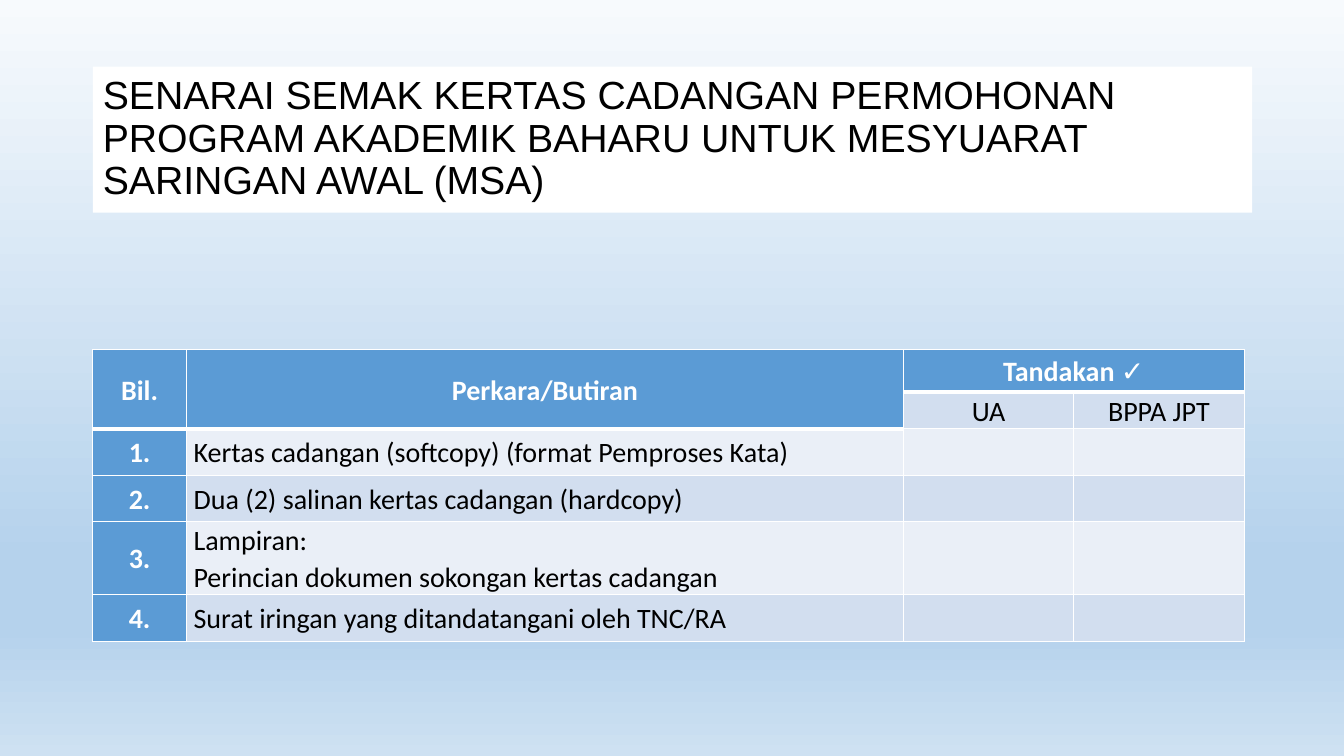
import lxml.etree
import pptx
import pptx.dml.color
import pptx.enum.text
import pptx.oxml.ns
import pptx.util
from pptx.util import Inches

WHITE, BLACK, BLUE = "FFFFFF", "000000", "5B9BD5"
BANDS = ["D2DEEF", "EAEFF7"]


def rgb(color):
    return pptx.dml.color.RGBColor.from_string(color)


def add_filled(parent, tag, color, **attributes):
    """Append an a: element that holds a colour, such as a border or gradient stop."""
    qn = pptx.oxml.ns.qn
    element = lxml.etree.SubElement(parent, qn(tag), **attributes)
    holder = element if tag == "a:gs" else lxml.etree.SubElement(element, qn("a:solidFill"))
    lxml.etree.SubElement(holder, qn("a:srgbClr"), val=color)


presentation = pptx.Presentation()
presentation.slide_width, presentation.slide_height = Inches(13.33), Inches(7.5)
slide = presentation.slides.add_slide(presentation.slide_layouts[5])

# Background gradient
background = slide.background.fill
background.gradient()
background.gradient_angle = 270
stops = background.gradient_stops
stop_list = slide.background._cSld.find(".//" + pptx.oxml.ns.qn("a:gsLst"))
for stop in list(stop_list):
    stop_list.remove(stop)
for percent, color in [(0, "F7FAFD"), (74, "B5D2EC"), (83, "B5D2EC"), (100, "CEE1F2")]:
    add_filled(stop_list, "a:gs", color, pos=str(percent * 1000))

# Title
title = slide.shapes.title
title.left, title.top = Inches(0.92), Inches(0.66)
title.width, title.height = Inches(11.5), Inches(1.45)
title.fill.solid()
title.fill.fore_color.rgb = rgb(WHITE)
title.text_frame.text = (
    "SENARAI SEMAK KERTAS CADANGAN PERMOHONAN PROGRAM AKADEMIK BAHARU "
    "UNTUK MESYUARAT SARINGAN AWAL (MSA)"
)
title.text_frame.auto_size = pptx.enum.text.MSO_AUTO_SIZE.NONE
title.text_frame.vertical_anchor = pptx.enum.text.MSO_ANCHOR.MIDDLE
heading = title.text_frame.paragraphs[0]
heading.alignment = pptx.enum.text.PP_ALIGN.LEFT
heading.line_spacing = 0.9
heading.runs[0].font.name = "Arial"
heading.runs[0].font.size = pptx.util.Pt(28)
heading.runs[0].font.color.rgb = rgb(BLACK)

# Checklist
items = [
    "Kertas cadangan (softcopy) (format Pemproses Kata)",
    "Dua (2) salinan kertas cadangan (hardcopy)",
    "Lampiran:\nPerincian dokumen sokongan kertas cadangan",
    "Surat iringan yang ditandatangani oleh TNC/RA",
]
rows = [["Bil.", "Perkara/Butiran", "Tandakan ✓", ""], ["", "", "UA", "BPPA JPT"]]
rows += [[f"{number}.", item, "", ""] for number, item in enumerate(items, 1)]

checklist = slide.shapes.add_table(
    len(rows), 4, Inches(0.92), Inches(3.47), Inches(11.43), Inches(2.87)
).table
for column, width in zip(checklist.columns, [0.93, 7.11, 1.69, 1.69]):
    column.width = Inches(width)
for row, height in zip(checklist.rows, [0.42, 0.26, 0.46, 0.46, 0.61, 0.46]):
    row.height = Inches(height)

for r, texts in enumerate(rows):
    for c, text in enumerate(texts):
        cell = checklist.cell(r, c)
        is_header = r == 0 or c == 0 or (r == 1 and c == 1)
        header_end = 1 if c < 2 else 0
        cell.margin_left = cell.margin_right = Inches(0.07)
        cell.margin_top = cell.margin_bottom = 0
        cell.vertical_anchor = pptx.enum.text.MSO_ANCHOR.MIDDLE
        for side in "LRTB":
            heavy = (side == "B" and r <= header_end) or (side == "T" and r == header_end + 1)
            width = pptx.util.Pt(3 if heavy else 1)
            add_filled(cell._tc.get_or_add_tcPr(), f"a:ln{side}", WHITE, w=str(int(width)))
        cell.fill.solid()
        cell.fill.fore_color.rgb = rgb(BLUE if is_header else BANDS[(r + 1) % 2])
        if not text:
            continue
        cell.text_frame.text = text
        for paragraph in cell.text_frame.paragraphs:
            is_item = r > 1 and c == 1
            paragraph.alignment = getattr(pptx.enum.text.PP_ALIGN, "LEFT" if is_item else "CENTER")
            paragraph.line_spacing = 1.07
            font = paragraph.runs[0].font
            font.name = "Calibri"
            font.size = pptx.util.Pt(20)
            font.bold = is_header
            font.color.rgb = rgb(WHITE if is_header else BLACK)

for first, last in [((0, 0), (1, 0)), ((0, 1), (1, 1)), ((0, 2), (0, 3))]:
    checklist.cell(*first).merge(checklist.cell(*last))

presentation.save("out.pptx")
